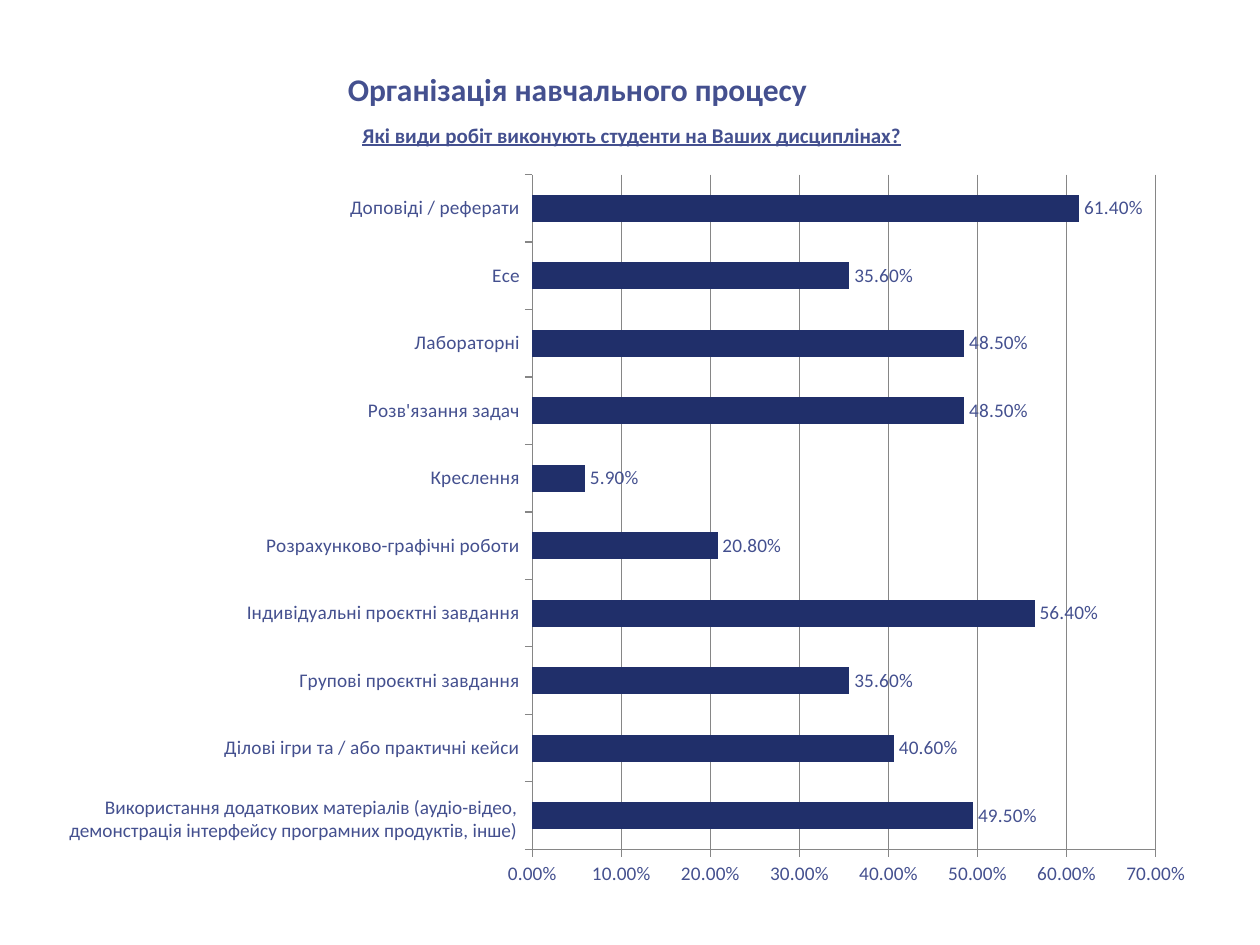
from lxml import etree
from pptx import Presentation
from pptx.chart.data import CategoryChartData
from pptx.dml.color import RGBColor
from pptx.enum.chart import (XL_CHART_TYPE as ChartType, XL_LABEL_POSITION as LabelPos,
                             XL_TICK_MARK as Tick)
from pptx.enum.text import MSO_AUTO_SIZE as AutoSize, PP_ALIGN as Align
from pptx.oxml.ns import qn
from pptx.util import Emu, Pt

PX_PER_INCH = 126
FONT = "Calibri"
TEXT = "44508F"
BAR = "202F6A"
GRID = "868686"

LONG_LABEL = ("Використання додаткових матеріалів (аудіо-відео, "
              "демонстрація інтерфейсу програмних продуктів, інше)")

# Bottom bar first; its long label stands in a separate text box
WORK_TYPES = [
    ("", 0.495),
    ("Ділові ігри та / або практичні кейси", 0.406),
    ("Групові проєктні завдання", 0.356),
    ("Індивідуальні проєктні завдання", 0.564),
    ("Розрахунково-графічні роботи", 0.208),
    ("Креслення", 0.059),
    ("Розв'язання задач", 0.485),
    ("Лабораторні", 0.485),
    ("Есе", 0.356),
    ("Доповіді / реферати", 0.614),
]


def px(length):
    return Emu(round(length * 914400 / PX_PER_INCH))


def color(value):
    return RGBColor.from_string(value)


def style_font(font, size, bold=False, underline=False):
    font.name = FONT
    font.size = Pt(size)
    font.bold = bold
    font.underline = underline
    font.color.rgb = color(TEXT)


def add_text(page, text, frame, size, align=Align.CENTER, **style):
    box = page.shapes.add_textbox(*map(px, frame))
    text_frame = box.text_frame
    text_frame.word_wrap = True
    text_frame.auto_size = AutoSize.SHAPE_TO_FIT_TEXT
    text_frame.text = text
    para = text_frame.paragraphs[0]
    para.alignment = align
    style_font(para.runs[0].font, size, **style)


def set_plot_layout(chart, x, y, w, h):
    """Fix the inner plot area as fractions of the chart."""
    plot_area = chart.plots[0]._element.getparent()
    for old in plot_area.findall(qn("c:layout")):
        plot_area.remove(old)
    layout = etree.Element(qn("c:layout"))
    plot_area.insert(0, layout)
    manual = etree.SubElement(layout, qn("c:manualLayout"))
    settings = [("layoutTarget", "inner"), ("xMode", "edge"), ("yMode", "edge"),
                ("x", x), ("y", y), ("w", w), ("h", h)]
    for name, value in settings:
        etree.SubElement(manual, qn(f"c:{name}")).set("val", str(value))


def style_axis(axis):
    axis.major_tick_mark = Tick.OUTSIDE
    axis.minor_tick_mark = Tick.NONE
    style_font(axis.tick_labels.font, 11)
    axis.format.line.color.rgb = color(GRID)
    axis.format.line.width = Pt(0.75)


def add_bar_chart(page, rows, frame):
    data = CategoryChartData(number_format="0.00%")
    data.categories = [name for name, _ in rows]
    data.add_series("Series 1", [share for _, share in rows])
    chart = page.shapes.add_chart(ChartType.BAR_CLUSTERED, *map(px, frame), data).chart
    chart.has_legend = False
    chart.has_title = False
    style_font(chart.font, 11)
    set_plot_layout(chart, 0.432, 0.049, 0.484, 0.833)

    # Bars and their labels
    plot = chart.plots[0]
    plot.gap_width = 150
    plot.vary_by_categories = False
    fill = plot.series[0].format.fill
    fill.solid()
    fill.fore_color.rgb = color(BAR)
    plot.has_data_labels = True
    labels = plot.data_labels
    labels.show_value = True
    labels.position = LabelPos.OUTSIDE_END
    labels.number_format = "0.00%"
    labels.number_format_is_linked = False
    style_font(labels.font, 11)

    # Axes
    shares = chart.value_axis
    style_axis(chart.category_axis)
    style_axis(shares)
    shares.minimum_scale = 0
    shares.maximum_scale = 0.7
    shares.major_unit = 0.1
    shares.tick_labels.number_format = "0.00%"
    shares.tick_labels.number_format_is_linked = False
    shares.has_major_gridlines = True
    grid_line = shares.major_gridlines.format.line
    grid_line.color.rgb = color(GRID)
    grid_line.width = Pt(0.75)


def main():
    deck = Presentation()
    deck.slide_width = px(1260)
    deck.slide_height = px(945)
    page = deck.slides.add_slide(deck.slide_layouts[6])

    # Heading
    add_text(page, "Організація навчального процесу", (220, 64, 715, 51), 18, bold=True)

    # Chart with its long bottom label
    add_bar_chart(page, WORK_TYPES, (-24, 135, 1288, 810))
    add_text(page, LONG_LABEL, (44, 789, 486, 101), 11, Align.RIGHT)

    # Survey question
    add_text(page, "Які види робіт виконують студенти на Ваших дисциплінах?",
             (344, 116, 576, 38), 12, bold=True, underline=True)

    deck.save("out.pptx")


if __name__ == "__main__":
    main()
